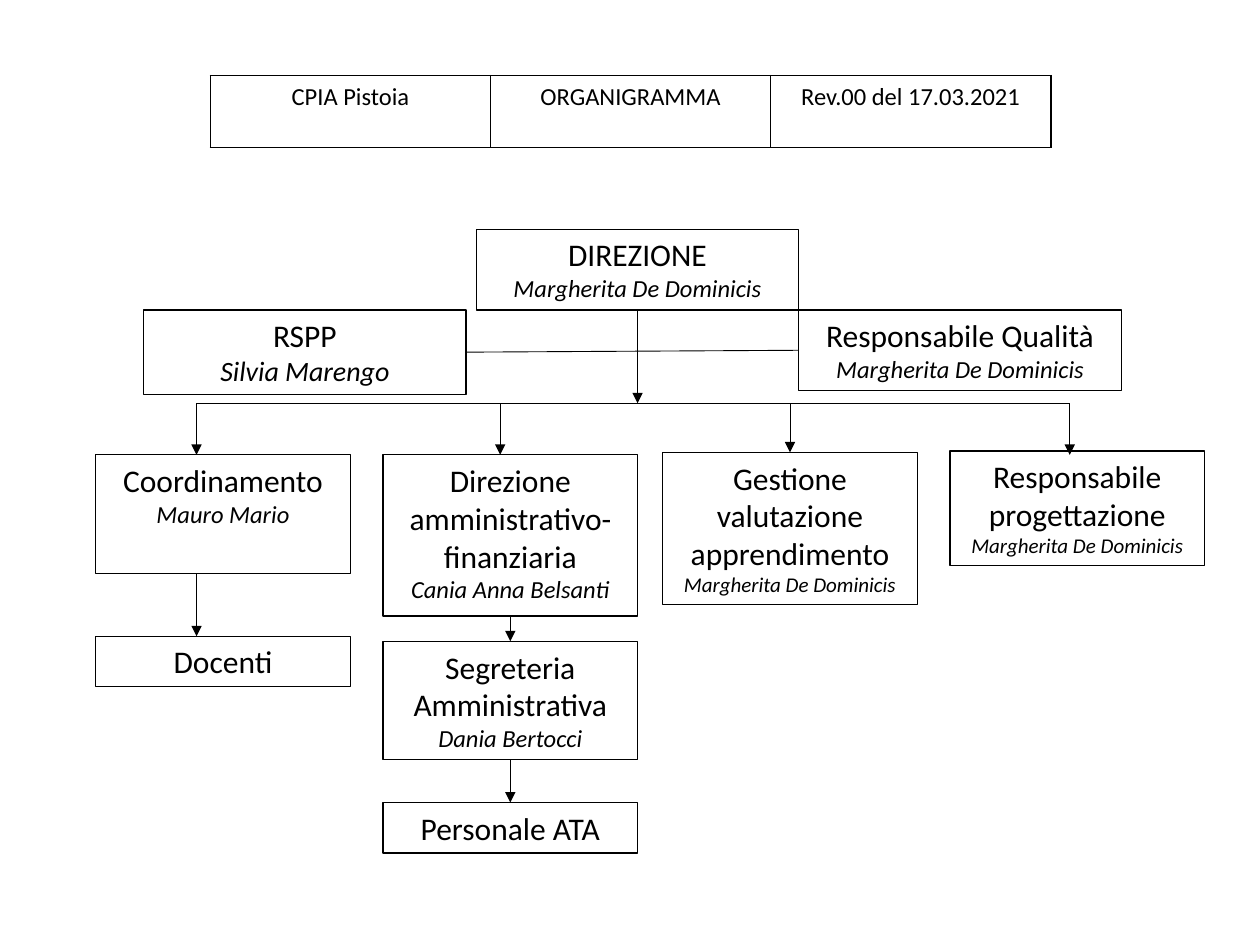
from lxml.etree import SubElement
from pptx import Presentation
from pptx.dml.color import RGBColor
from pptx.enum.shapes import MSO_CONNECTOR, MSO_SHAPE
from pptx.enum.text import MSO_ANCHOR, PP_ALIGN
from pptx.oxml.ns import qn
from pptx.util import Inches, Pt

TOP, LEFT, BOTTOM, RIGHT = range(4)


def color(value):
    return RGBColor.from_string(value)


def write(p, text, size=18, italic=False, font="Calibri", ink="000000"):
    p.alignment = PP_ALIGN.CENTER
    r = p.add_run()
    r.text = text
    r.font.name = font
    r.font.size = Pt(size)
    r.font.italic = italic
    r.font.color.rgb = color(ink)


class Chart:
    ink = "000000"
    box_line = 0.75
    arrow_line = 0.5
    table_line = 1

    def __init__(self, slide):
        self.s = slide

    def header(self, texts, x, y, w, h):
        frame = self.s.shapes.add_table(
            1, len(texts), Inches(x), Inches(y), Inches(w), Inches(h))
        table = frame.table
        table.first_row = table.horz_banding = False
        for cell, text in zip(table.rows[0].cells, texts):
            write(cell.text_frame.paragraphs[0], text, size=14, ink=self.ink)
            self.borders(cell)
            cell.fill.background()

    def borders(self, cell):
        tc_pr = cell._tc.get_or_add_tcPr()
        for side in ("a:lnL", "a:lnR", "a:lnT", "a:lnB"):
            ln = SubElement(tc_pr, qn(side), w=str(Pt(self.table_line)))
            fill = SubElement(ln, qn("a:solidFill"))
            SubElement(fill, qn("a:srgbClr"), val=self.ink)

    def box(self, role, x, y, w, h, person=None, size=14):
        sp = self.s.shapes.add_shape(
            MSO_SHAPE.RECTANGLE, Inches(x), Inches(y), Inches(w), Inches(h))
        sp.shadow.inherit = False
        sp.fill.background()
        sp.line.color.rgb = color(self.ink)
        sp.line.width = Pt(self.box_line)
        tf = sp.text_frame
        tf.word_wrap = True
        tf.vertical_anchor = MSO_ANCHOR.TOP
        write(tf.paragraphs[0], role, ink=self.ink)
        if person:
            write(tf.add_paragraph(), person, size=size, italic=True, ink=self.ink)
        return sp

    def line(self, x1, y1, x2, y2, arrow=True, begin=None, end=None):
        cn = self.s.shapes.add_connector(
            MSO_CONNECTOR.STRAIGHT, Inches(x1), Inches(y1), Inches(x2), Inches(y2))
        if begin:
            cn.begin_connect(*begin)
        if end:
            cn.end_connect(*end)
        cn.line.color.rgb = color(self.ink)
        cn.line.width = Pt(self.arrow_line)
        if arrow:
            SubElement(cn.line._get_or_add_ln(), qn("a:tailEnd"), type="triangle")
        SubElement(cn._element.spPr, qn("a:effectLst"))


def main():
    prs = Presentation()
    prs.slide_width, prs.slide_height = Inches(10), Inches(7.5)
    chart = Chart(prs.slides.add_slide(prs.slide_layouts[6]))
    head = "Margherita De Dominicis"
    wide, narrow = 2.56, 2.02
    col1, col2, col3, col4 = 0.76, 3.04, 5.26, 7.54
    bus_y, bus_left, bus_right = 3.2, 1.56, 8.49

    chart.header(["CPIA Pistoia", "ORGANIGRAMMA", "Rev.00 del 17.03.2021"],
                 1.67, 0.6, 6.67, 0.57)

    direction = chart.box("DIREZIONE", 3.78, 1.82, wide, 0.64, head)
    safety = chart.box("RSPP", 1.14, 2.46, wide, 0.67, "Silvia Marengo", 16)
    quality = chart.box("Responsabile Qualità", 6.34, 2.46, wide, 0.64, head)
    chart.box("Coordinamento", col1, 3.61, narrow, 0.94, "Mauro Mario")
    finance = chart.box("Direzione amministrativo-finanziaria",
                        col2, 3.61, narrow, 1.28, "Cania Anna Belsanti")
    evaluation = chart.box("Gestione valutazione apprendimento",
                           col3, 3.59, narrow, 1.21, head, 12)
    office = chart.box("Segreteria Amministrativa",
                       col2, 5.09, narrow, 0.94, "Dania Bertocci")
    chart.box("Responsabile progettazione", col4, 3.58, narrow, 0.91, head, 12)
    chart.box("Docenti", col1, 5.05, narrow, 0.4)
    staff = chart.box("Personale ATA", col2, 6.37, narrow, 0.4)

    chart.line(5.06, 2.46, 5.06, bus_y, begin=(direction, BOTTOM))
    chart.line(3.7, 2.79, 6.34, 2.78, arrow=False,
               begin=(safety, RIGHT), end=(quality, LEFT))
    chart.line(bus_left, bus_y, bus_right, bus_y, arrow=False)
    for x in (bus_left, 3.97, bus_right):
        chart.line(x, bus_y, x, 3.61)
    chart.line(6.27, bus_y, 6.27, 3.59, end=(evaluation, TOP))
    chart.line(bus_left, 4.55, bus_left, 5.05)
    for upper, lower in ((finance, office), (office, staff)):
        chart.line(4.05, 4.89, 4.05, 5.09, begin=(upper, BOTTOM), end=(lower, TOP))

    prs.save("out.pptx")


if __name__ == "__main__":
    main()
